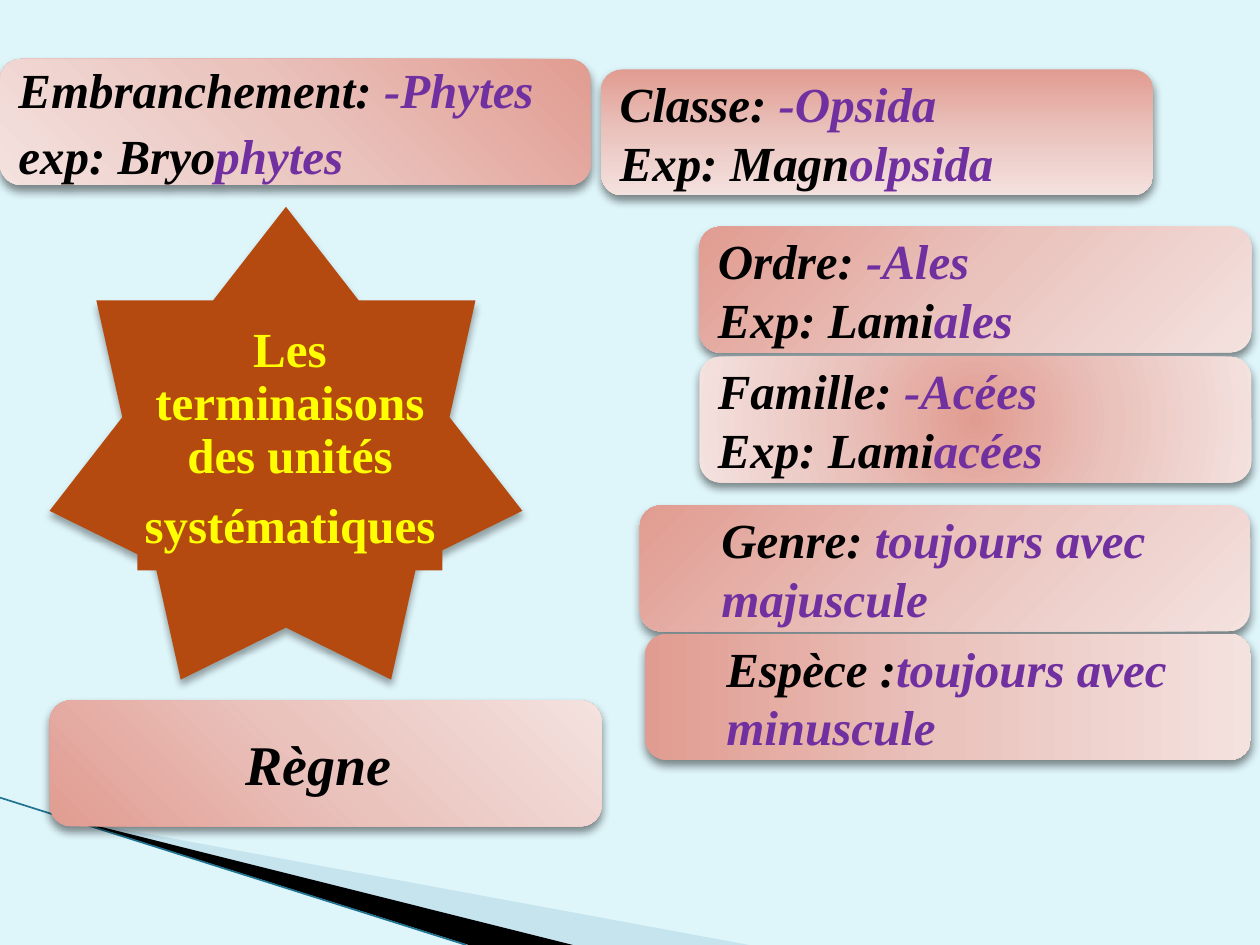
from dataclasses import dataclass
from lxml.etree import SubElement
from pptx import Presentation
from pptx.dml.color import RGBColor
from pptx.enum.shapes import MSO_CONNECTOR, MSO_SHAPE
from pptx.enum.text import MSO_ANCHOR, MSO_AUTO_SIZE, PP_ALIGN
from pptx.oxml import parse_xml
from pptx.oxml.ns import nsdecls, qn
from pptx.util import Cm, Pt


@dataclass(frozen=True)
class Theme:
    background: str = "DEF5FA"
    wave: str = "A0CBDC"
    edge: str = "1F7391"
    star: str = "B54A10"
    title: str = "FFFF00"
    label: str = "000000"
    ending: str = "7030A0"
    gradient: tuple = ((0, "E19C91"), (50, "EAC3BD"), (100, "F4E2DF"))
    font: str = "Times New Roman"
    body_size: int = 28
    large_size: int = 32


theme = Theme()


def add_text(para, text, color=theme.label, size=theme.body_size, italic=True):
    span = para.add_run()
    span.text = text
    span.font.name = theme.font
    span.font.size = Pt(size)
    span.font.bold = True
    span.font.italic = italic
    span.font.color.rgb = RGBColor.from_string(color)


def add_shadow(shape, opacity, blur):
    shape.shadow.inherit = False
    effects = shape._element.spPr.find(qn("a:effectLst"))
    effects.append(parse_xml(
        f'<a:outerShdw {nsdecls("a")} blurRad="{Pt(blur)}" dist="{Pt(3)}" dir="5400000" rotWithShape="0">'
        f'<a:srgbClr val="000000"><a:alpha val="{opacity * 1000}"/></a:srgbClr></a:outerShdw>'))


deck = Presentation()
deck.slide_width, deck.slide_height = Cm(25.4), Cm(19.05)
page = deck.slides.add_slide(deck.slide_layouts[5])
page.background.fill.solid()
page.background.fill.fore_color.rgb = RGBColor.from_string(theme.background)

waves = [
    (theme.wave, 40, [(1.4, 16.52), (15.1, 19.05), (11.58, 19.05)]),
    (theme.label, 100, [(1.36, 16.5), (11.55, 19.05), (9.45, 19.05)]),
]
for color, opacity, points in waves:
    corners = [(Cm(x), Cm(y)) for x, y in points]
    outline = page.shapes.build_freeform(*corners[0], scale=1.0)
    outline.add_line_segments(corners[1:], close=True)
    wave = outline.convert_to_shape()
    wave.shadow.inherit = False
    wave.line.fill.background()
    wave.fill.solid()
    wave.fill.fore_color.rgb = RGBColor.from_string(color)
    tint = wave._element.spPr.find(qn("a:solidFill"))[0]
    SubElement(tint, qn("a:alpha")).set("val", str(opacity * 1000))

edge = page.shapes.add_connector(MSO_CONNECTOR.STRAIGHT, 0, Cm(16.08), Cm(9.4), Cm(19.05))
edge.line.color.rgb = RGBColor.from_string(theme.edge)
edge.line.width = Pt(0.95)
SubElement(edge._element.spPr, qn("a:effectLst"))

star = page.shapes.add_shape(MSO_SHAPE.STAR_7_POINT, Cm(1), Cm(4.17), Cm(9.53), Cm(9.53))
star.fill.solid()
star.fill.fore_color.rgb = RGBColor.from_string(theme.star)
star.line.fill.background()
add_shadow(star, opacity=35, blur=4)

title = page.shapes.title
title._element.getparent().append(title._element)
title.left, title.top, title.width, title.height = Cm(2.77), Cm(6.22), Cm(6.15), Cm(5.28)
title.fill.solid()
title.fill.fore_color.rgb = RGBColor.from_string(theme.star)
frame = title.text_frame
frame.word_wrap = True
frame.auto_size = MSO_AUTO_SIZE.NONE
frame.vertical_anchor = MSO_ANCHOR.MIDDLE
frame.margin_left = frame.margin_right = frame.margin_top = frame.margin_bottom = Cm(0.08)
for index, text in enumerate(["Les terminaisons des unités", "systématiques"]):
    para = frame.add_paragraph() if index else frame.paragraphs[0]
    para.alignment = PP_ALIGN.CENTER
    para.line_spacing = 0.9
    para.space_after = Pt(10)
    add_text(para, text, color=theme.title, italic=False)

from_corner = '<a:path path="circle"><a:fillToRect r="100000" b="100000"/></a:path>'
from_center = '<a:path path="circle"><a:fillToRect l="50000" t="50000" r="50000" b="50000"/></a:path>'
linear = '<a:lin ang="{}" scaled="0"/>'
left, center = PP_ALIGN.LEFT, PP_ALIGN.CENTER
body, large = theme.body_size, theme.large_size

ranks = [
    (0, 1.19, 11.91, linear.format(135 * 60000), left, 0, 4.5, body,
     [("Embranchement: ", "-Phytes"), ("exp: Bryo", "phytes")]),
    (14.1, 4.57, 11.13, from_corner, left, 0, 0, body,
     [("Ordre: ", "-Ales"), ("Exp: Lami", "ales")]),
    (12.12, 1.4, 11.13, linear.format(90 * 60000), left, 0, 0, body,
     [("Classe: ", "-Opsida"), ("Exp: Magn", "olpsida")]),
    (14.1, 7.19, 11.13, from_center, left, 0, 0, body,
     [("Famille:", " -Acées"), ("Exp: Lami", "acées")]),
    (12.9, 10.19, 12.3, from_corner, left, 1.27, 0, body,
     [("Genre: ", "toujours avec"), ("", "majuscule")]),
    (13, 12.78, 12.22, linear.format(0), left, 1.27, 0, body,
     [("Espèce :", "toujours avec minuscule")]),
    (1, 14.12, 11.13, linear.format(315 * 60000), center, 0, 0, large,
     [("Règne ", "")]),
]
stops = "".join(f'<a:gs pos="{place * 1000}"><a:srgbClr val="{color}"/></a:gs>'
                for place, color in theme.gradient)

for x, y, width, direction, alignment, indent, gap, size, lines in ranks:
    box = page.shapes.add_shape(MSO_SHAPE.ROUNDED_RECTANGLE, Cm(x), Cm(y), Cm(width), Cm(2.54))
    box._element.spPr.insert(2, parse_xml(
        f'<a:gradFill {nsdecls("a")} rotWithShape="1"><a:gsLst>{stops}</a:gsLst>{direction}</a:gradFill>'))
    box.line.fill.background()
    add_shadow(box, opacity=45, blur=5)
    frame = box.text_frame
    frame.word_wrap = True
    frame.vertical_anchor = MSO_ANCHOR.MIDDLE
    for index, (label, ending) in enumerate(lines):
        para = frame.add_paragraph() if index else frame.paragraphs[0]
        para.alignment = alignment
        if indent:
            para._p.get_or_add_pPr().set("marL", str(Cm(indent)))
        if index and gap:
            para.space_before = Pt(gap)
        if label:
            add_text(para, label, size=size)
        if ending:
            add_text(para, ending, color=theme.ending, size=size)

deck.save("out.pptx")
